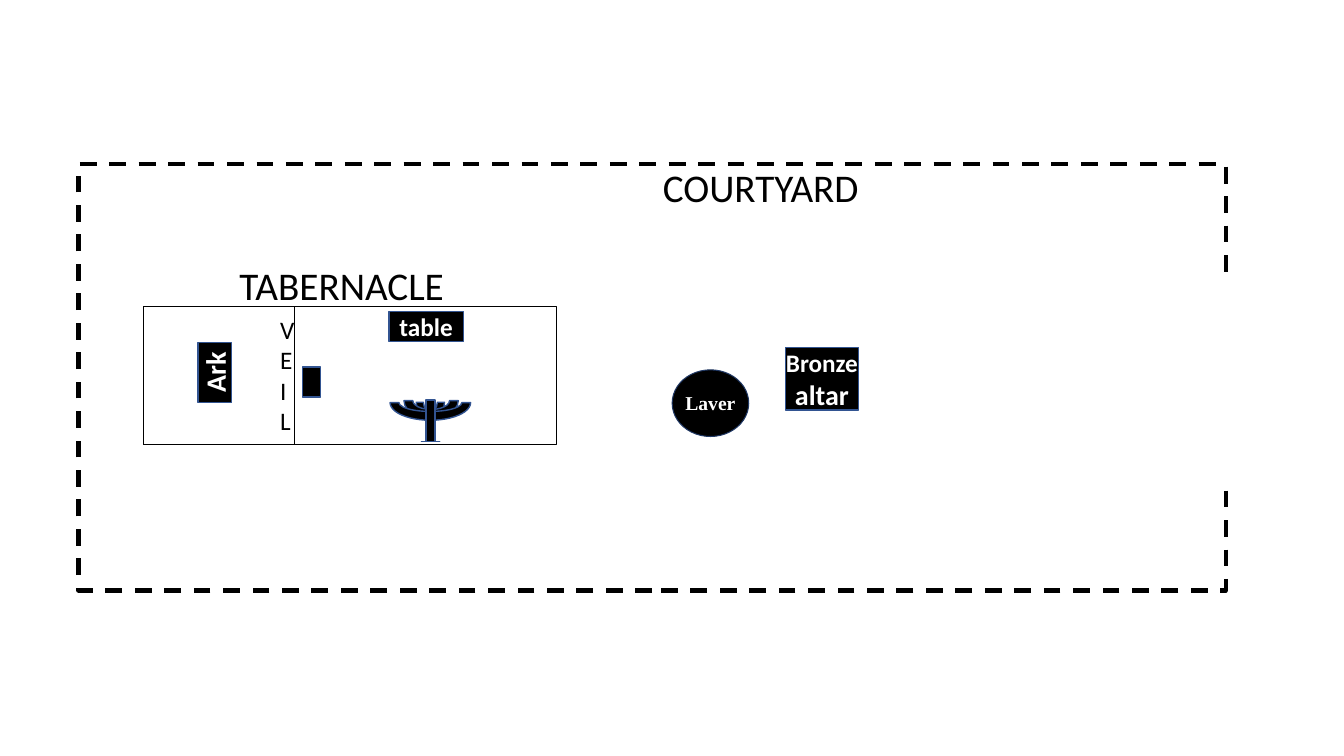
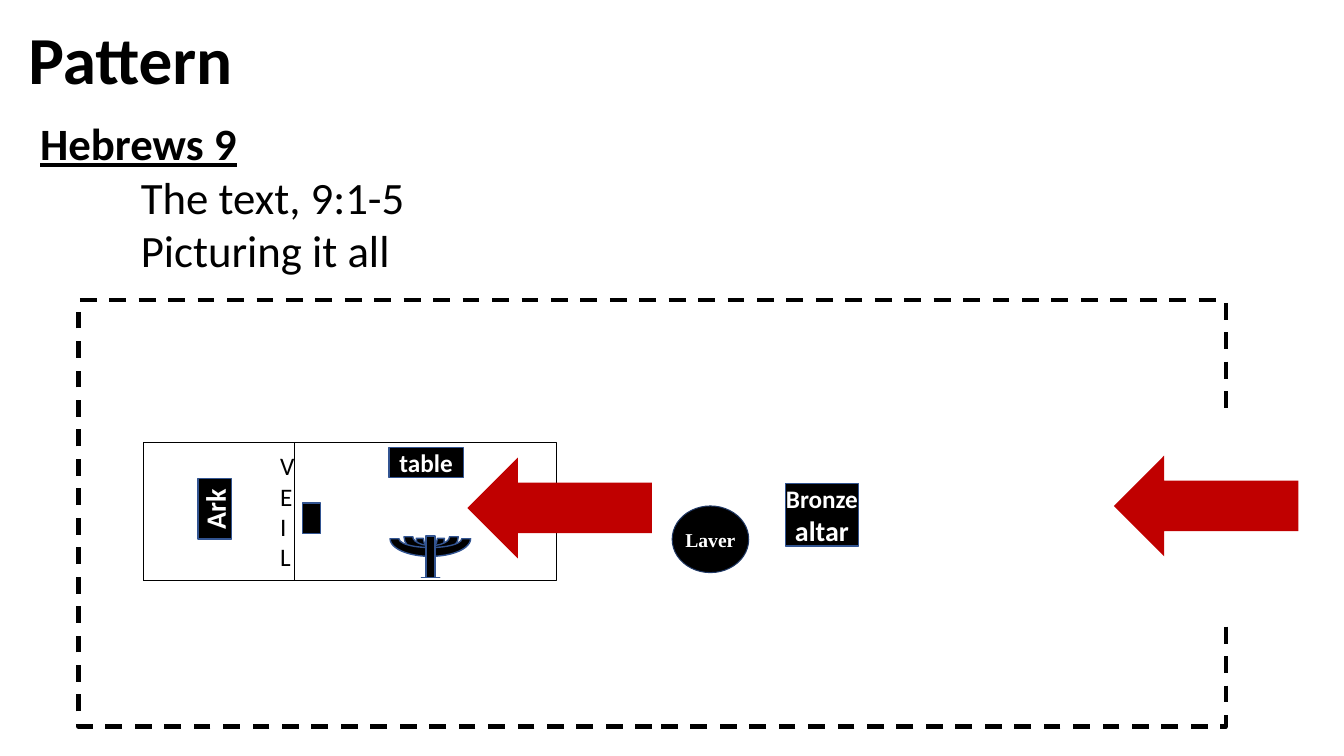
from pptx import Presentation
from pptx.dml.color import RGBColor
from pptx.enum.dml import MSO_LINE
from pptx.enum.shapes import MSO_SHAPE
from pptx.enum.text import MSO_ANCHOR, PP_ALIGN
from pptx.util import Cm, Pt

# Shared look
BLACK, WHITE, RED = "000000", "FFFFFF", "C00000"
BLUE, NAVY = "325491", "203864"
FONT, SERIF = "Calibri", "Times New Roman"
COURT_W, COURT_H = 28.91, 10.74


def color(code):
    return RGBColor.from_string(code)


def place(box, item):
    """Lengths in cm of an item given relative to the corner of a box."""
    left, top, wide, high = item
    return Cm(box[0] + left), Cm(box[1] + top), Cm(wide), Cm(high)


def style(part, size, tint=BLACK, font=FONT, bold=False, line=False):
    for run in part.runs:
        run.font.size = Pt(size)
        run.font.name = font
        run.font.bold = bold
        run.font.underline = line
        run.font.color.rgb = color(tint)


def shape(shapes, kind, box, item, fill=None, line=None, width=1, turn=0):
    form = shapes.add_shape(kind, *place(box, item))
    form.shadow.inherit = False
    form.rotation = turn
    if fill:
        form.fill.solid()
        form.fill.fore_color.rgb = color(fill)
    else:
        form.fill.background()
    if line:
        form.line.color.rgb = color(line)
        form.line.width = Pt(width)
    else:
        form.line.fill.background()
    return form


def label(form, text, sizes, font=FONT):
    """White bold text in the middle of a shape, one size per line."""
    frame = form.text_frame
    frame.margin_left = frame.margin_right = 0
    frame.vertical_anchor = MSO_ANCHOR.MIDDLE
    frame.text = text
    for part, size in zip(frame.paragraphs, sizes):
        part.alignment = PP_ALIGN.CENTER
        style(part, size, WHITE, font, bold=True)


def note(slide, box, item, text, size):
    frame = slide.shapes.add_textbox(*place(box, item)).text_frame
    frame.word_wrap = True
    frame.text = text
    part = frame.paragraphs[0]
    part.alignment = PP_ALIGN.CENTER
    style(part, size)


def lampstand(slide, box):
    group = slide.shapes.add_group_shape().shapes
    # Three nested pairs of branches
    for item in ((8.51, 5.59, 0.71, 0.81), (8.2, 5.51, 1.37, 0.89),
                 (7.85, 5.56, 2.03, 0.89)):
        shape(group, MSO_SHAPE.BLOCK_ARC, box, item, BLACK, BLUE, turn=180)
    # Stem with a flat foot
    stem = shape(group, MSO_SHAPE.UP_ARROW, box, (8.64, 5.94, 0.46, 1.04),
                 BLACK, BLUE, turn=180)
    stem.adjustments[0] = 0.5
    stem.adjustments[1] = 0


def tent(slide, box):
    shapes, rect = slide.shapes, MSO_SHAPE.RECTANGLE
    # Whole tent, then the inner room
    for wide in (10.41, 3.81):
        shape(shapes, rect, box, (1.63, 3.58, wide, 3.48), line=BLACK)
    note(slide, box, (4.83, 3.66, 0.66, 3.33), "VEIL", 18)
    # Furniture
    ark = shape(shapes, rect, box, (2.67, 4.83, 1.52, 0.84), BLACK, BLUE,
                turn=270)
    label(ark, "Ark", [20])
    table = shape(shapes, rect, box, (7.82, 3.71, 1.88, 0.76), BLACK, BLUE)
    label(table, "table", [18])
    shape(shapes, rect, box, (5.64, 5.11, 0.46, 0.76), BLACK, BLUE)
    lampstand(slide, box)


def court(slide, box):
    shapes, rect = slide.shapes, MSO_SHAPE.RECTANGLE
    fence = shape(shapes, rect, box, (0, 0, COURT_W, COURT_H), line=BLACK,
                  width=3)
    fence.line.dash_style = MSO_LINE.DASH
    tent(slide, box)
    altar = shape(shapes, rect, box, (17.81, 4.62, 1.85, 1.57), BLACK, BLUE)
    label(altar, "Bronze\naltar", [18, 20])
    laver = shape(shapes, MSO_SHAPE.OVAL, box, (14.96, 5.18, 1.93, 1.68),
                  BLACK, NAVY, 0.75)
    label(laver, "Laver", [14], SERIF)
    # Gate: the gap in the fence
    shape(shapes, rect, box, (28.24, 2.82, 1.45, 5.21), WHITE)


def names(slide, box):
    for left, top, text in ((12.67, -0.15, "COURTYARD"),
                            (2.11, 2.31, "TABERNACLE")):
        note(slide, box, (left, top, 9.04, 1.45), text, 28)


def arrows(slide, box):
    for left, top in ((26.09, 3.91), (9.8, 3.96)):
        shape(slide.shapes, MSO_SHAPE.LEFT_ARROW, box,
              (left, top, 4.65, 2.54), RED)


def title(slide, text, box):
    head = slide.shapes.title
    head.left, head.top, head.width, head.height = map(Cm, box)
    frame = head.text_frame
    frame.text = text
    frame.vertical_anchor = MSO_ANCHOR.TOP
    part = frame.paragraphs[0]
    part.alignment = PP_ALIGN.LEFT
    style(part, 48, bold=True)


def points(slide, box):
    frame = slide.shapes.add_textbox(*map(Cm, box)).text_frame
    frame.word_wrap = True
    frame.text = "Hebrews 9\nThe text, 9:1-5\nPicturing it all"
    first, *rest = frame.paragraphs
    style(first, 32, bold=True, line=True)
    for part in rest:
        style(part, 32)
        part._p.get_or_add_pPr().set("marL", str(Cm(2.54)))


def plan(deck):
    slide = deck.slides.add_slide(deck.slide_layouts[6])
    box = (1.98, 4.14)
    court(slide, box)
    names(slide, box)


def pattern(deck):
    slide = deck.slides.add_slide(deck.slide_layouts[5])
    title(slide, "Pattern", (0.46, 0.3, 31.27, 2.31))
    points(slide, (0.76, 2.79, 31.27, 4.37))
    box = (1.98, 7.57)
    court(slide, box)
    arrows(slide, box)


def main():
    deck = Presentation()
    deck.slide_width, deck.slide_height = Cm(33.87), Cm(19.05)
    plan(deck)
    pattern(deck)
    deck.save("out.pptx")


if __name__ == "__main__":
    main()
